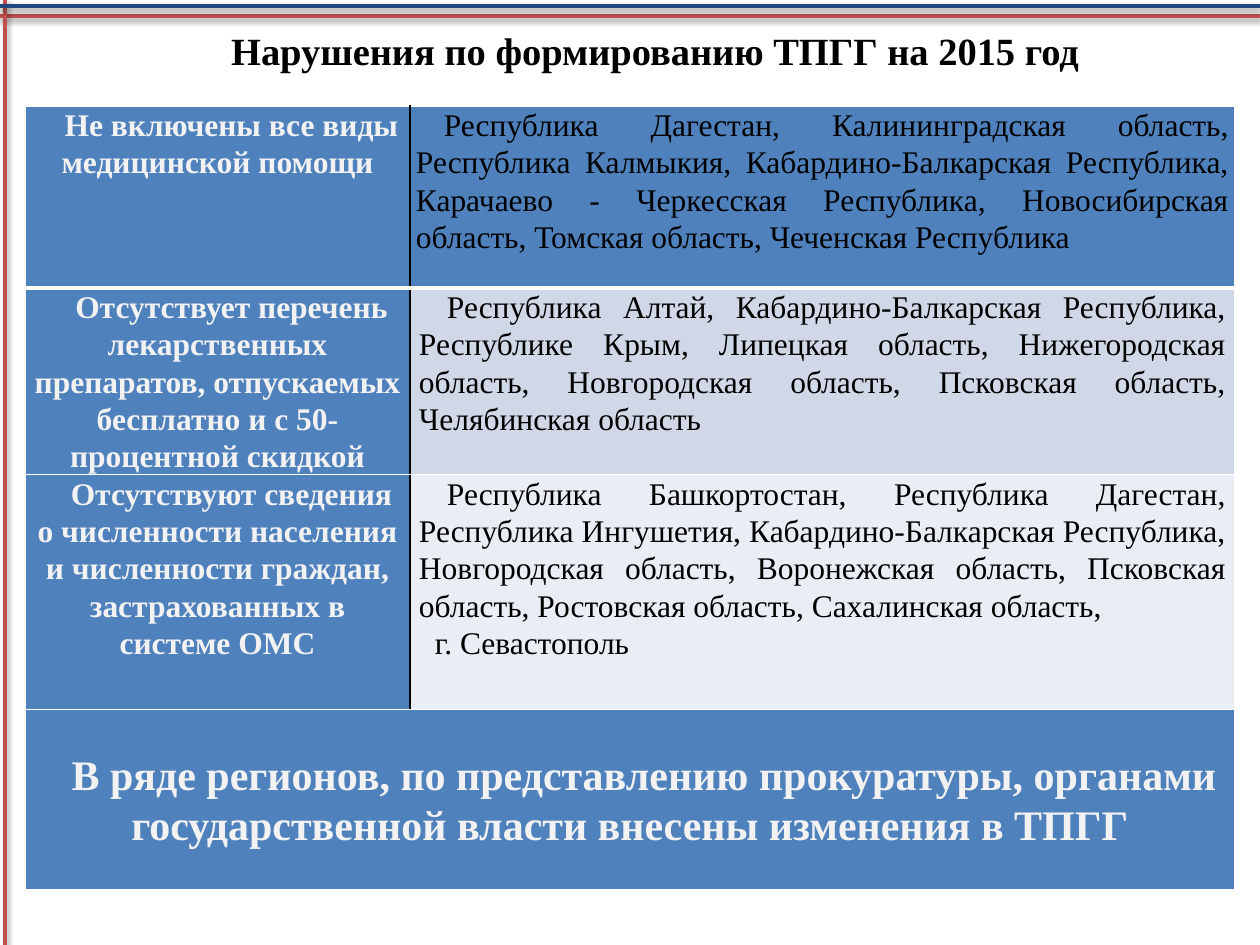
from lxml.etree import SubElement
from pptx import Presentation
from pptx.dml.color import RGBColor
from pptx.enum.shapes import MSO_CONNECTOR
from pptx.enum.text import MSO_ANCHOR, PP_ALIGN
from pptx.oxml.ns import qn
from pptx.util import Emu, Pt

FONT = "Times New Roman"
COLORS = {
    "red": "C0504D",
    "navy": "1F497D",
    "blue": "4F81BD",
    "band_dark": "D0D8E8",
    "band_light": "E9EDF4",
    "light_text": "F2F2F2",
    "white": "FFFFFF",
    "black": "000000",
}
COLUMN_WIDTHS = [385, 825]
ROW_HEIGHTS = [182, 186, 235, 180]
FIRST_INDENT = 28

# Violation, regions (one string per paragraph), fill of the regions, side margin
VIOLATIONS = [
    ("Не включены все виды медицинской помощи",
     ["Республика Дагестан, Калининградская область, Республика Калмыкия, "
      "Кабардино-Балкарская Республика, Карачаево - Черкесская Республика, "
      "Новосибирская область, Томская область, Чеченская Республика"],
     "blue", 6),
    ("Отсутствует перечень лекарственных препаратов, отпускаемых бесплатно "
     "и с 50-процентной скидкой",
     ["Республика Алтай, Кабардино-Балкарская Республика, Республике Крым, "
      "Липецкая область, Нижегородская область, Новгородская область, "
      "Псковская область, Челябинская область"],
     "band_dark", 9),
    ("Отсутствуют сведения о численности населения и численности граждан, "
     "застрахованных в системе ОМС",
     ["Республика Башкортостан, Республика Дагестан, Республика Ингушетия, "
      "Кабардино-Балкарская Республика, Новгородская область, Воронежская "
      "область, Псковская область, Ростовская область, Сахалинская область,",
      "г. Севастополь"],
     "band_light", 9),
]
CONCLUSION = ("В ряде регионов, по представлению прокуратуры, органами "
              "государственной власти внесены изменения в ТПГГ")


def px(length):
    return Emu(round(length * 914400 / 126))


def rgb(name):
    return RGBColor.from_string(COLORS[name])


def set_font(paragraph, size, color, bold):
    font = paragraph.font
    font.name, font.size, font.bold = FONT, Pt(size), bold
    font.color.rgb = rgb(color)


def add_shadowed_line(slide, start, end, color):
    line = slide.shapes.add_connector(
        MSO_CONNECTOR.STRAIGHT, *(px(value) for value in start + end))
    line.line.color.rgb = rgb(color)
    line.line.width = Pt(2)
    effects = SubElement(line._element.spPr, qn("a:effectLst"))
    shadow = SubElement(effects, qn("a:outerShdw"), blurRad=str(Pt(3.1)),
                        dist=str(Pt(1.6)), dir="5400000", rotWithShape="0")
    shadow_color = SubElement(shadow, qn("a:srgbClr"), val=COLORS["black"])
    SubElement(shadow_color, qn("a:alpha"), val="38000")


def set_title(slide, text):
    title = slide.shapes.title
    title.left, title.top, title.width, title.height = map(px, (94, 16, 1122, 69))
    frame = title.text_frame
    frame.text = text
    frame.vertical_anchor = MSO_ANCHOR.MIDDLE
    paragraph = frame.paragraphs[0]
    paragraph.alignment = PP_ALIGN.CENTER
    set_font(paragraph, 22, "black", True)


def style_cell(cell, fill, borders):
    """Borders map the sides L, R, T and B to a colour and a width in points."""
    properties = cell._tc.get_or_add_tcPr()
    for side, (color, width) in borders.items():
        border = SubElement(properties, qn(f"a:ln{side}"), w=str(Pt(width)))
        solid = SubElement(border, qn("a:solidFill"))
        SubElement(solid, qn("a:srgbClr"), val=COLORS[color])
    cell.fill.solid()
    cell.fill.fore_color.rgb = rgb(fill)


def fill_cell(cell, texts, margin, size, color, bold, alignment):
    cell.margin_left = cell.margin_right = px(margin)
    cell.margin_top = cell.margin_bottom = 0
    cell.text = "\n".join(texts)
    for number, paragraph in enumerate(cell.text_frame.paragraphs):
        indent = FIRST_INDENT if number == 0 else 16
        paragraph._p.get_or_add_pPr().set("indent", str(px(indent)))
        paragraph.alignment = alignment
        paragraph.line_spacing = 1.07
        set_font(paragraph, size, color, bold)


def add_violations_table(slide):
    frame = slide.shapes.add_table(
        len(ROW_HEIGHTS), len(COLUMN_WIDTHS), px(25), px(106),
        px(sum(COLUMN_WIDTHS)), px(sum(ROW_HEIGHTS)))
    table = frame.table
    table.first_row = table.horz_banding = False
    for column, width in zip(table.columns, COLUMN_WIDTHS):
        column.width = px(width)
    for row, height in zip(table.rows, ROW_HEIGHTS):
        row.height = px(height)

    plain = {side: ("white", 1) for side in "LRTB"}
    for index, (violation, regions, fill, margin) in enumerate(VIOLATIONS):
        heading, details = table.rows[index].cells
        borders = plain | {"T": ("white", 3 if index == 1 else 1),
                           "B": ("white", 3 if index == 0 else 1)}
        style_cell(heading, "blue", borders | {"R": ("black", 1)})
        style_cell(details, fill, borders | {"L": ("black", 1)})
        fill_cell(heading, [violation], margin, 18, "light_text", True,
                  PP_ALIGN.CENTER)
        fill_cell(details, regions, margin, 18, "black", False,
                  PP_ALIGN.JUSTIFY)

    conclusion, spanned = table.rows[len(VIOLATIONS)].cells
    conclusion.merge(spanned)
    for cell in (conclusion, spanned):
        style_cell(cell, "blue", plain)
    conclusion.vertical_anchor = MSO_ANCHOR.MIDDLE
    fill_cell(conclusion, [CONCLUSION], 9, 24, "light_text", True,
              PP_ALIGN.CENTER)


def main():
    presentation = Presentation()
    presentation.slide_width, presentation.slide_height = px(1260), px(945)
    slide = presentation.slides.add_slide(presentation.slide_layouts[5])
    add_shadowed_line(slide, (1260, 16), (0, 16), "red")
    add_shadowed_line(slide, (5, 0), (5, 945), "red")
    add_shadowed_line(slide, (0, 6), (1260, 6), "navy")
    set_title(slide, "Нарушения по формированию ТПГГ на 2015 год")
    add_violations_table(slide)
    presentation.save("out.pptx")


if __name__ == "__main__":
    main()
